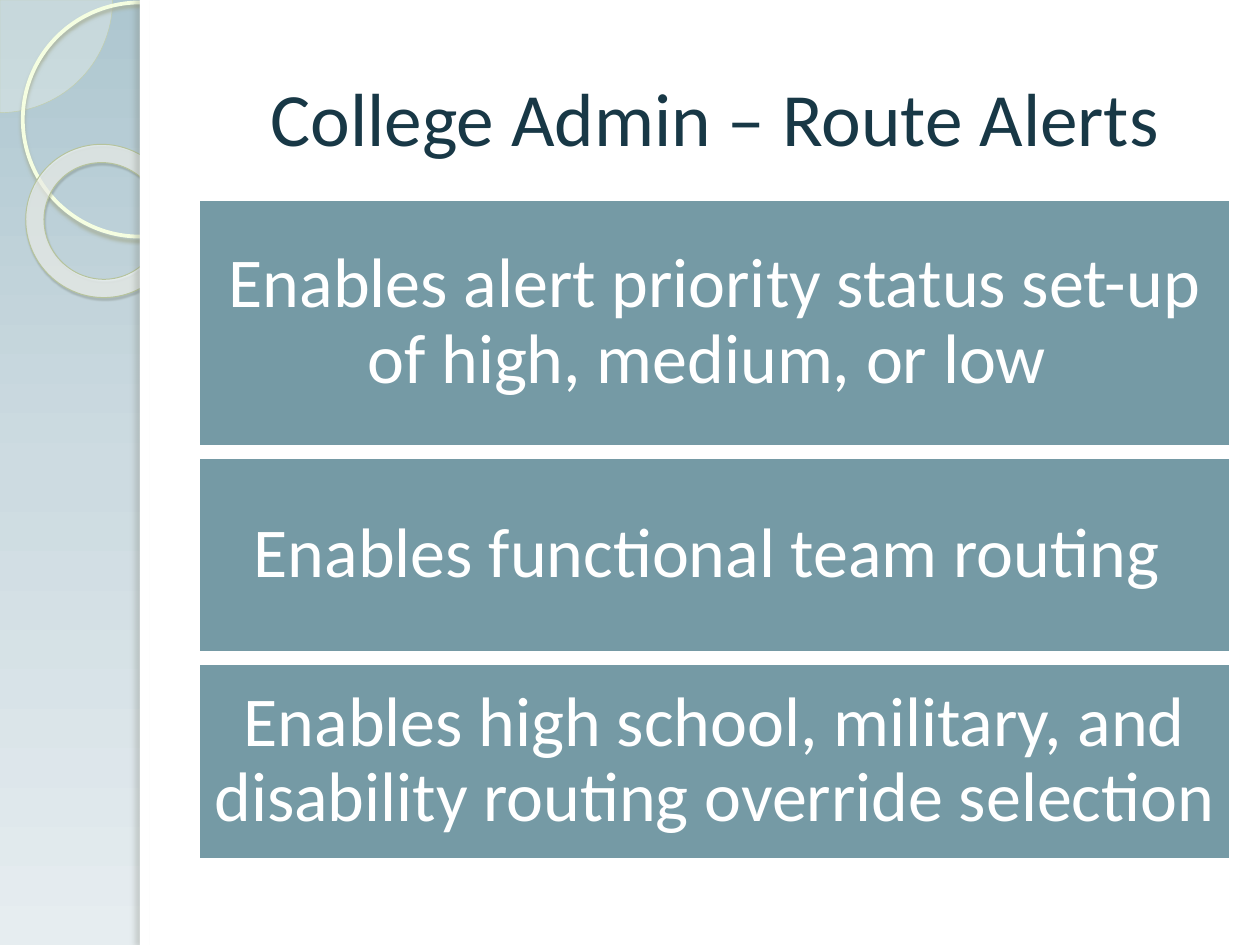
"""Build the Route Alerts slide: a decorated side band and three stacked statements."""
from dataclasses import dataclass
from typing import Optional

from lxml import etree
from pptx import Presentation
from pptx.dml.color import RGBColor
from pptx.enum.shapes import MSO_SHAPE
from pptx.enum.text import MSO_ANCHOR, PP_ALIGN
from pptx.oxml.ns import qn
from pptx.util import Cm, Pt

RECTANGLE = MSO_SHAPE.RECTANGLE
OVAL = MSO_SHAPE.OVAL
DONUT = MSO_SHAPE.DONUT
PIE = MSO_SHAPE.PIE
MIDDLE = MSO_ANCHOR.MIDDLE
CENTER = PP_ALIGN.CENTER

FONT = "Calibri"
WHITE = "FFFFFF"
TITLE_COLOR = "183846"
STATEMENT_COLOR = "759AA5"
SLIDE_WIDTH, SLIDE_HEIGHT = 25.4, 19.05
BAND_WIDTH = 2.82
CONTENT_LEFT, CONTENT_WIDTH = 3.99, 20.83
STATEMENT_TOP, STATEMENT_GAP = 4.01, 0.2
BACKGROUND_STOPS = ((0, "AEC7D0"), (50, "CDDBE1"), (100, "E6EDF0"))


@dataclass
class Shadow:
    """Outer shadow: opacity in percent, lengths in points, angle in degrees."""
    color: str
    opacity: int
    blur: float
    distance: float
    angle: int


@dataclass
class Decoration:
    """Plain shape with its box in centimetres and its look."""
    kind: MSO_SHAPE
    left: float
    top: float
    width: float
    height: float
    fill: Optional[str] = None
    opacity: int = 100
    line: Optional[str] = None
    line_width: float = 1
    rotation: float = 0
    adjustments: tuple = ()
    shadow: Optional[Shadow] = None


@dataclass
class Statement:
    """Wording of one box and its height in centimetres."""
    text: str
    height: float


DECORATIONS = (
    Decoration(PIE, -2.27, -2.27, 4.54, 4.54, "FAFDF5", 33, "C2CEA9", 0.25,
               adjustments=(0, 54.02)),
    Decoration(OVAL, 0.46, 0.05, 4.72, 4.72, line="F5FEE1", line_width=2.15,
               shadow=Shadow("A6AE96", 85, 2, 2, 90)),
    Decoration(DONUT, 0.51, 2.92, 3.12, 3.07, "FEFFFB", 60, "B6C39C", 0.58, 38.6, (0.12,),
               Shadow("535948", 35, 1, 1.2, 75)),
    Decoration(RECTANGLE, BAND_WIDTH, 0, SLIDE_WIDTH - BAND_WIDTH, SLIDE_HEIGHT, WHITE),
    Decoration(RECTANGLE, BAND_WIDTH, 0, 0.2, SLIDE_HEIGHT, WHITE,
               shadow=Shadow("6F7367", 25, 3, 3, 180)),
)

STATEMENTS = (
    Statement("Enables alert priority status set-up of high, medium, or low ", 5),
    Statement("Enables functional team routing ", 3.96),
    Statement("Enables high school, military, and disability routing override selection", 3.96),
)


def rgb(color: str) -> RGBColor:
    """Turn a hex string into a colour."""
    return RGBColor.from_string(color)


def append_color(parent, color: str, opacity: int = 100) -> None:
    """Append a colour element, with its opacity, to an XML parent."""
    element = etree.SubElement(parent, qn("a:srgbClr"), val=color)
    if opacity < 100:
        etree.SubElement(element, qn("a:alpha"), val=str(opacity * 1000))


def paint_background(slide) -> None:
    """Fill the slide from top to bottom with the background gradient."""
    fill = slide.background.fill
    fill.gradient()
    fill.gradient_angle = 270
    stops = slide.element.find(".//" + qn("a:gsLst"))
    for stop in list(stops):
        stops.remove(stop)
    for position, color in BACKGROUND_STOPS:
        append_color(etree.SubElement(stops, qn("a:gs"), pos=str(position * 1000)), color)


def add_shadow(shape, shadow: Shadow) -> None:
    """Give a shape an outer shadow."""
    effects = shape.element.spPr.find(qn("a:effectLst"))
    outer = etree.SubElement(effects, qn("a:outerShdw"), blurRad=str(Pt(shadow.blur)),
                             dist=str(Pt(shadow.distance)), dir=str(shadow.angle * 60000),
                             algn="tl", rotWithShape="0")
    append_color(outer, shadow.color, shadow.opacity)


def add_decoration(slide, item: Decoration):
    """Draw one shape and return it."""
    shape = slide.shapes.add_shape(item.kind, Cm(item.left), Cm(item.top),
                                   Cm(item.width), Cm(item.height))
    shape.shadow.inherit = False
    shape.rotation = item.rotation
    for index, value in enumerate(item.adjustments):
        shape.adjustments[index] = value
    if item.fill:
        shape.fill.solid()
        shape.fill.fore_color.rgb = rgb(item.fill)
        if item.opacity < 100:
            color = shape.element.spPr.find(qn("a:solidFill")).find(qn("a:srgbClr"))
            etree.SubElement(color, qn("a:alpha"), val=str(item.opacity * 1000))
    else:
        shape.fill.background()
    if item.line:
        shape.line.color.rgb = rgb(item.line)
        shape.line.width = Pt(item.line_width)
    else:
        shape.line.fill.background()
    if item.shadow:
        add_shadow(shape, item.shadow)
    return shape


def write_text(shape, text: str, size: float, color: str, spacing: float = 1) -> None:
    """Write one centred paragraph in a shape."""
    frame = shape.text_frame
    frame.text = text
    frame.word_wrap = True
    frame.vertical_anchor = MIDDLE
    paragraph = frame.paragraphs[0]
    paragraph.alignment = CENTER
    paragraph.line_spacing = spacing
    font = paragraph.runs[0].font
    font.name = FONT
    font.size = Pt(size)
    font.color.rgb = rgb(color)


def add_statement(slide, statement: Statement, top: float) -> None:
    """Draw one statement box with its text."""
    shape = add_decoration(slide, Decoration(RECTANGLE, CONTENT_LEFT, top, CONTENT_WIDTH,
                                             statement.height, STATEMENT_COLOR,
                                             line=WHITE, line_width=2))
    frame = shape.text_frame
    frame.margin_left = frame.margin_right = Cm(0.28)
    frame.margin_top = frame.margin_bottom = Cm(0.28)
    write_text(shape, statement.text, 40, WHITE, 0.9)


def main() -> None:
    """Build and save the presentation."""
    presentation = Presentation()
    presentation.slide_width = Cm(SLIDE_WIDTH)
    presentation.slide_height = Cm(SLIDE_HEIGHT)
    slide = presentation.slides.add_slide(presentation.slide_layouts[6])
    paint_background(slide)
    for item in DECORATIONS:
        add_decoration(slide, item)
    title = slide.shapes.add_textbox(Cm(CONTENT_LEFT), Cm(0.76), Cm(CONTENT_WIDTH), Cm(3.18))
    write_text(title, "College Admin – Route Alerts", 43, TITLE_COLOR)
    top = STATEMENT_TOP
    for statement in STATEMENTS:
        add_statement(slide, statement, top)
        top += statement.height + STATEMENT_GAP
    presentation.save("out.pptx")


if __name__ == "__main__":
    main()
